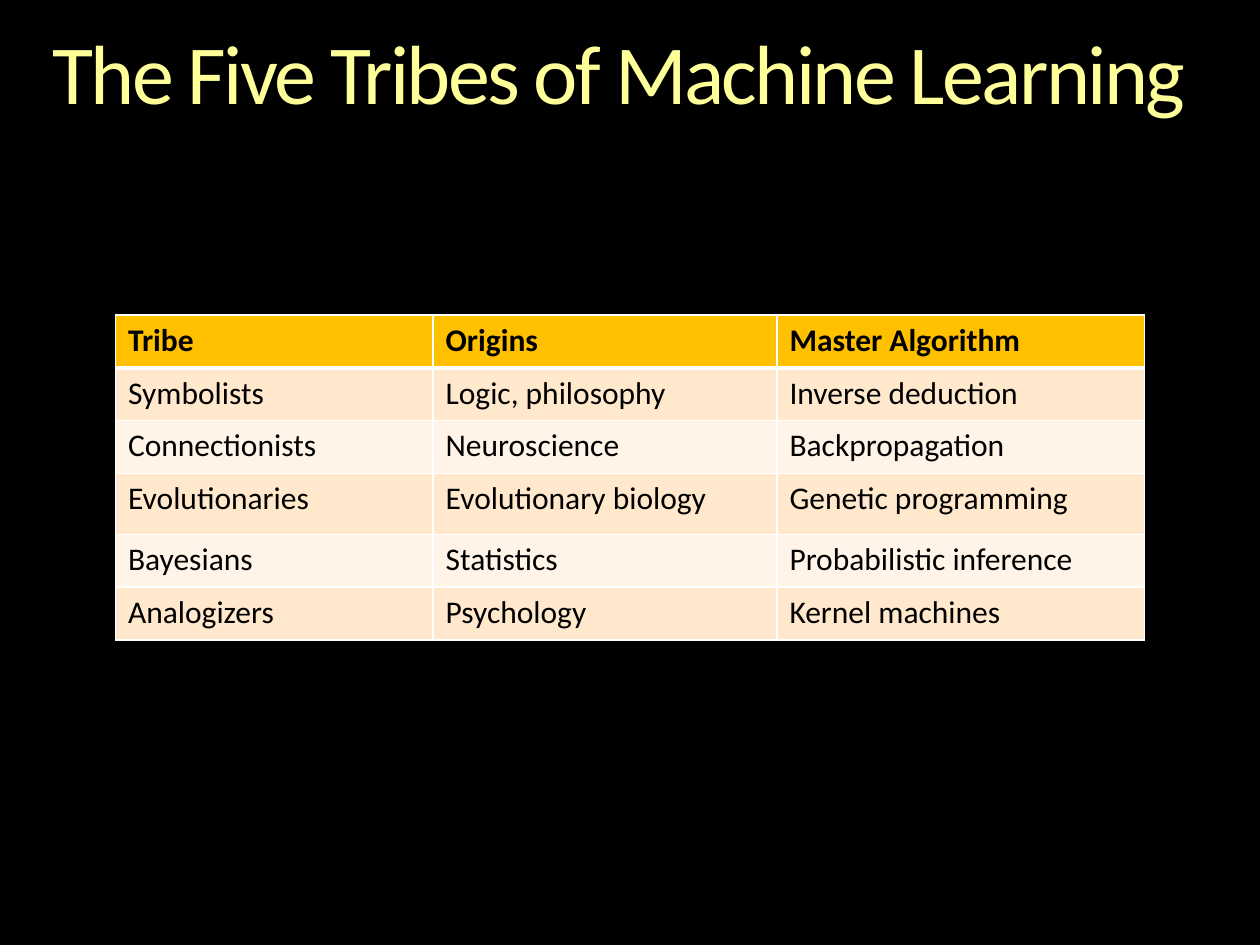
from dataclasses import dataclass

from lxml.etree import SubElement
from pptx import Presentation
from pptx.dml.color import RGBColor
from pptx.oxml.ns import qn
from pptx.util import Pt


@dataclass(frozen=True)
class Theme:
    font: str = "Calibri"
    background: str = "000000"
    title: str = "FFFF99"
    text: str = "000000"
    border: str = "FFFFFF"
    header: str = "FFC000"
    bands: tuple = ("FFE8CC", "FFF4E7")
    title_size: float = 48
    table_size: float = 18
    thin: float = 1
    thick: float = 3


THEME = Theme()

TRIBES = [
    ("Tribe", "Origins", "Master Algorithm"),
    ("Symbolists", "Logic, philosophy", "Inverse deduction"),
    ("Connectionists", "Neuroscience", "Backpropagation"),
    ("Evolutionaries", "Evolutionary biology", "Genetic programming"),
    ("Bayesians", "Statistics", "Probabilistic inference"),
    ("Analogizers", "Psychology", "Kernel machines"),
]
COLUMN_WIDTHS = (181.5, 196.5, 210)
ROW_HEIGHTS = (30.2, 30.2, 30.2, 34.8, 30.2, 30.2)


def style_run(r, size, color, bold=False):
    r.font.name = THEME.font
    r.font.size = Pt(size)
    r.font.bold = bold
    r.font.color.rgb = RGBColor.from_string(color)


def add_title(s, text):
    tf = s.shapes.add_textbox(Pt(30), Pt(18), Pt(660), Pt(52.7)).text_frame
    tf.word_wrap = True
    tf.margin_left = tf.margin_right = tf.margin_top = tf.margin_bottom = 0
    tf.text = text
    p = tf.paragraphs[0]
    p.line_spacing = 0.9
    r = p.runs[0]
    style_run(r, THEME.title_size, THEME.title)
    r.font._element.set("spc", "-150")


def add_border(cell, side, width):
    ln = SubElement(cell._tc.get_or_add_tcPr(), qn(f"a:ln{side}"), w=str(Pt(width)))
    fill = SubElement(ln, qn("a:solidFill"))
    SubElement(fill, qn("a:srgbClr"), val=THEME.border)


def style_cell(cell, text, row):
    is_header = row == 0
    widths = {
        "L": THEME.thin,
        "R": THEME.thin,
        "T": THEME.thick if row == 1 else THEME.thin,
        "B": THEME.thick if is_header else THEME.thin,
    }
    for side, width in widths.items():
        add_border(cell, side, width)
    color = THEME.header if is_header else THEME.bands[(row - 1) % 2]
    cell.fill.solid()
    cell.fill.fore_color.rgb = RGBColor.from_string(color)
    cell.text_frame.text = text
    r = cell.text_frame.paragraphs[0].runs[0]
    style_run(r, THEME.table_size, THEME.text, is_header)


def add_tribes_table(s, rows):
    table = s.shapes.add_table(
        len(rows), len(COLUMN_WIDTHS), Pt(66), Pt(180),
        Pt(sum(COLUMN_WIDTHS)), Pt(sum(ROW_HEIGHTS)),
    ).table
    for column, width in zip(table.columns, COLUMN_WIDTHS):
        column.width = Pt(width)
    for row, height in zip(table.rows, ROW_HEIGHTS):
        row.height = Pt(height)
    for i, texts in enumerate(rows):
        for j, text in enumerate(texts):
            style_cell(table.cell(i, j), text, i)


def main():
    prs = Presentation()
    prs.slide_width, prs.slide_height = Pt(720), Pt(540)
    s = prs.slides.add_slide(prs.slide_layouts[6])
    s.background.fill.solid()
    s.background.fill.fore_color.rgb = RGBColor.from_string(THEME.background)
    add_title(s, "The Five Tribes of Machine Learning")
    add_tribes_table(s, TRIBES)
    prs.save("out.pptx")


if __name__ == "__main__":
    main()
